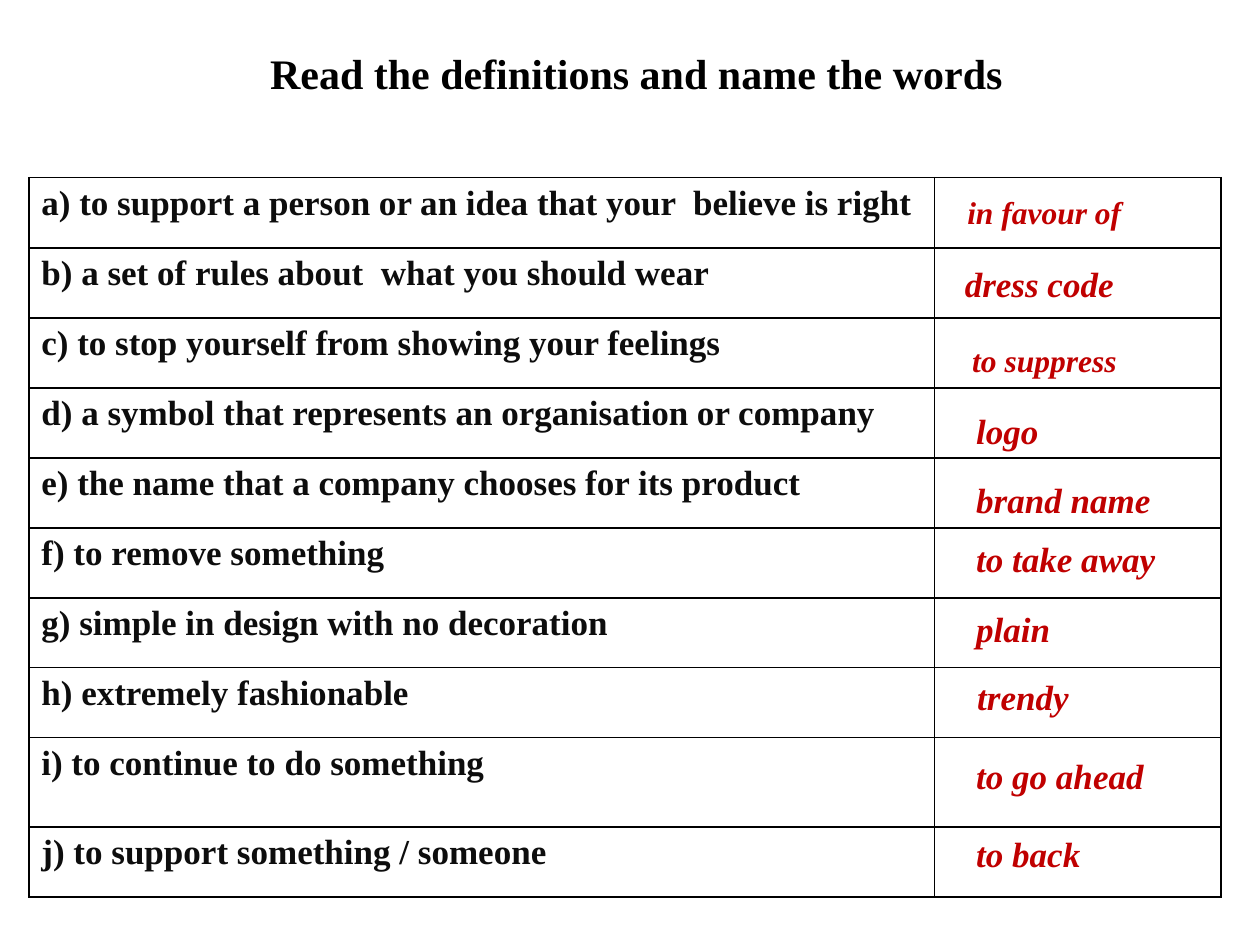
"""Build a vocabulary slide that matches definitions with words."""
from lxml import etree
from pptx import Presentation
from pptx.dml.color import RGBColor
from pptx.enum.text import MSO_ANCHOR, MSO_AUTO_SIZE, PP_ALIGN
from pptx.oxml.ns import qn
from pptx.util import Cm, Pt

CENTER = PP_ALIGN.CENTER
MIDDLE = MSO_ANCHOR.MIDDLE
GROW = MSO_AUTO_SIZE.SHAPE_TO_FIT_TEXT

BLACK = RGBColor(0x00, 0x00, 0x00)
INK = RGBColor(0x0D, 0x0D, 0x0D)
RED = RGBColor(0xC0, 0x00, 0x00)

TITLE = "Read the definitions and name the words"
TITLE_FORMAT = {"name": "Times New Roman", "size": Pt(24), "bold": True, "italic": False}
DEFINITION_FORMAT = {**TITLE_FORMAT, "size": Pt(20)}
ANSWER_FORMAT = {**DEFINITION_FORMAT, "italic": True}

DEFINITIONS = [
    "a) to support a person or an idea that your  believe is right",
    "b) a set of rules about  what you should wear",
    "c) to stop yourself from showing your feelings",
    "d) a symbol that represents an organisation or company",
    "e) the name that a company chooses for its product",
    "f) to remove something",
    "g) simple in design with no decoration",
    "h) extremely fashionable",
    "i) to continue to do something",
    "j) to support something / someone",
]
COLUMN_WIDTHS = (18.26, 5.77)
ROW_HEIGHTS = [1.42] + [1.41] * 7 + [1.8, 1.41]

ANSWER_RIGHT = 24.6
ANSWERS = [
    ("in favour of", 19.25, 3.76, 18),
    ("dress code", 19.2, 5.16, 20),
    ("to suppress", 19.35, 6.76, 18),
    ("logo", 19.43, 8.13, 20),
    ("brand name", 19.43, 9.53, 20),
    ("to take away", 19.43, 10.72, 20),
    ("plain", 19.43, 12.12, 20),
    ("trendy", 19.45, 13.49, 20),
    ("to go ahead", 19.43, 15.09, 20),
    ("to back", 19.43, 16.66, 20),
]


def write(frame, text, font_format, color):
    """Put formatted text into the first paragraph of a frame."""
    paragraph = frame.paragraphs[0]
    run = paragraph.add_run()
    run.text = text
    for attribute, value in font_format.items():
        setattr(run.font, attribute, value)
    run.font.color.rgb = color
    return paragraph


def add_title(slide):
    """Place the heading in the title placeholder."""
    title = slide.shapes.title
    position = {"left": Cm(1.4), "top": Cm(0.58), "width": Cm(22.86), "height": Cm(1.78)}
    for attribute, value in position.items():
        setattr(title, attribute, value)
    title.text_frame.vertical_anchor = MIDDLE
    write(title.text_frame, TITLE, TITLE_FORMAT, BLACK).alignment = CENTER


def frame_cell(cell):
    """Clear the cell fill and draw a thin black line on each side."""
    properties = cell._tc.get_or_add_tcPr()
    for side in ("a:lnL", "a:lnR", "a:lnT", "a:lnB"):
        line = etree.SubElement(properties, qn(side), w=str(Pt(1)))
        fill = etree.SubElement(line, qn("a:solidFill"))
        etree.SubElement(fill, qn("a:srgbClr"), val=str(BLACK))
    cell.fill.background()


def add_definitions(slide):
    """Add the table with definitions on the left and room for words."""
    table = slide.shapes.add_table(
        len(DEFINITIONS), len(COLUMN_WIDTHS), Cm(0.58), Cm(3.58),
        Cm(sum(COLUMN_WIDTHS)), Cm(sum(ROW_HEIGHTS))).table
    for option in ("first_row", "horz_banding"):
        setattr(table, option, False)
    for column, width in zip(table.columns, COLUMN_WIDTHS):
        column.width = Cm(width)
    for row, height, definition in zip(table.rows, ROW_HEIGHTS, DEFINITIONS):
        row.height = Cm(height)
        for cell in row.cells:
            frame_cell(cell)
        write(row.cells[0].text_frame, definition, DEFINITION_FORMAT, INK)


def add_answer(slide, word, left, top, size):
    """Add one red word over the right column."""
    height = 1.02 if size == 18 else 1.12
    answer = slide.shapes.add_textbox(Cm(left), Cm(top), Cm(ANSWER_RIGHT - left), Cm(height))
    frame = answer.text_frame
    for attribute, value in {"word_wrap": True, "auto_size": GROW}.items():
        setattr(frame, attribute, value)
    write(frame, word, {**ANSWER_FORMAT, "size": Pt(size)}, RED)


def main():
    """Build and save the slide."""
    deck = Presentation()
    deck.slide_width, deck.slide_height = Cm(25.4), Cm(19.05)
    slide = deck.slides.add_slide(deck.slide_layouts[5])
    add_title(slide)
    add_definitions(slide)
    for answer in ANSWERS:
        add_answer(slide, *answer)
    deck.save("out.pptx")


if __name__ == "__main__":
    main()
